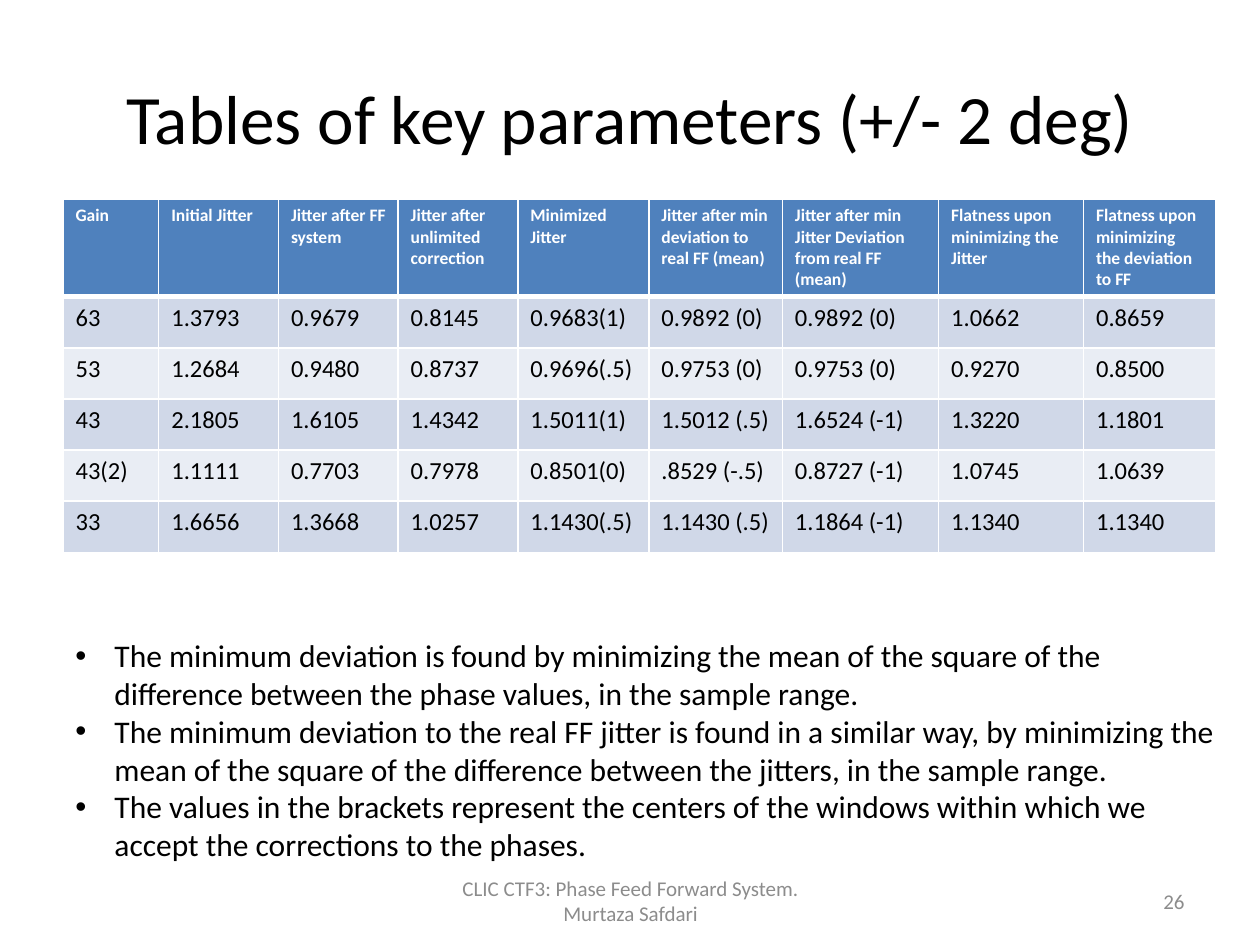
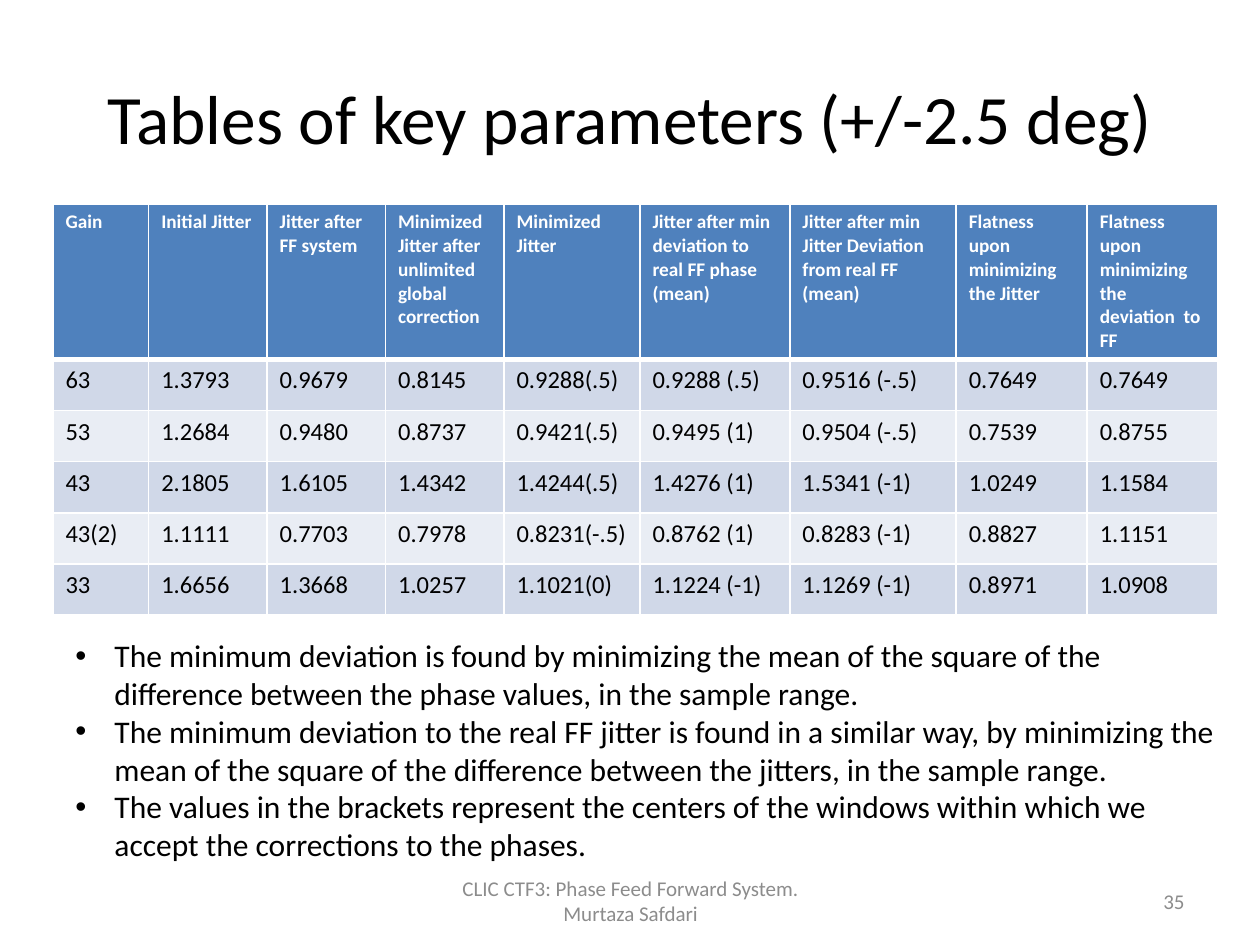
import pptx
import pptx.dml.color
import pptx.enum.text
import pptx.oxml
import pptx.oxml.ns
import pptx.util
from pptx.util import Inches

FONT = "Calibri"
BLACK, WHITE, GREY = "000000", "FFFFFF", "8C8C8C"
HEADER_FILL = "4F81BD"
BAND_FILLS = ("D0D8E8", "E9EDF4")
ROW_HEIGHT = Inches(2.03 / 5)
LEFT, CENTER, RIGHT = (
    pptx.enum.text.PP_ALIGN.LEFT,
    pptx.enum.text.PP_ALIGN.CENTER,
    pptx.enum.text.PP_ALIGN.RIGHT,
)
TOP, MIDDLE = pptx.enum.text.MSO_ANCHOR.TOP, pptx.enum.text.MSO_ANCHOR.MIDDLE

FOOTER = "CLIC CTF3: Phase Feed Forward System. Murtaza Safdari"
NOTES = [
    "The minimum deviation is found by minimizing the mean of the square of the "
    "difference between the phase values, in the sample range.",
    "The minimum deviation to the real FF jitter is found in a similar way, by minimizing "
    "the mean of the square of the difference between the jitters, in the sample range.",
    "The values in the brackets represent the centers of the windows within which we "
    "accept the corrections to the phases.",
]

MEASURED_JITTERS = [
    ["63", "1.3793", "0.9679", "0.8145"],
    ["53", "1.2684", "0.9480", "0.8737"],
    ["43", "2.1805", "1.6105", "1.4342"],
    ["43(2)", "1.1111", "0.7703", "0.7978"],
    ["33", "1.6656", "1.3668", "1.0257"],
]

PARAMETER_SLIDES = [
    {
        "title": "Tables of key parameters (+/- 2 deg)",
        "number": "26",
        "position": (0.5, 1.58),
        "widths": [0.76, 0.95, 0.95, 0.95, 1.04, 1.06, 1.24, 1.15, 1.05],
        "header_height": 0.77,
        "header_size": 10,
        "correction_header": "Jitter after unlimited correction",
        "deviation_header": "Jitter after min deviation to real FF (mean)",
        "minimized_values": [
            ["0.9683(1)", "0.9892 (0)", "0.9892 (0)", "1.0662", "0.8659"],
            ["0.9696(.5)", "0.9753 (0)", "0.9753 (0)", "0.9270", "0.8500"],
            ["1.5011(1)", "1.5012 (.5)", "1.6524 (-1)", "1.3220", "1.1801"],
            ["0.8501(0)", ".8529 (-.5)", "0.8727 (-1)", "1.0745", "1.0639"],
            ["1.1430(.5)", "1.1430 (.5)", "1.1864 (-1)", "1.1340", "1.1340"],
        ],
    },
    {
        "title": "Tables of key parameters (+/-2.5 deg)",
        "number": "35",
        "position": (0.42, 1.62),
        "widths": [0.76, 0.94, 0.94, 0.94, 1.08, 1.19, 1.32, 1.04, 1.04],
        "header_height": 1.22,
        "header_size": 11,
        "correction_header": "Minimized  Jitter after unlimited global  correction",
        "deviation_header": "Jitter after min deviation to real FF phase (mean)",
        "minimized_values": [
            ["0.9288(.5)", "0.9288 (.5)", "0.9516 (-.5)", "0.7649", "0.7649"],
            ["0.9421(.5)", "0.9495 (1)", "0.9504 (-.5)", "0.7539", "0.8755"],
            ["1.4244(.5)", "1.4276 (1)", "1.5341 (-1)", "1.0249", "1.1584"],
            ["0.8231(-.5)", "0.8762 (1)", "0.8283 (-1)", "0.8827", "1.1151"],
            ["1.1021(0)", "1.1224 (-1)", "1.1269 (-1)", "0.8971", "1.0908"],
        ],
    },
]


def color(hex_string):
    return pptx.dml.color.RGBColor.from_string(hex_string)


def write_text(paragraph, text, size=12, fill=BLACK, bold=False, align=LEFT):
    paragraph.alignment = align
    run = paragraph.add_run()
    run.text = text
    run.font.name = FONT
    run.font.size = pptx.util.Pt(size)
    run.font.bold = bold
    run.font.color.rgb = color(fill)


def add_bullet(paragraph):
    properties = paragraph._p.get_or_add_pPr()
    properties.set("marL", str(Inches(0.31)))
    properties.set("indent", str(-Inches(0.31)))
    namespace = pptx.oxml.ns.nsdecls("a")
    properties.append(pptx.oxml.parse_xml(f'<a:buFont {namespace} typeface="Arial"/>'))
    properties.append(pptx.oxml.parse_xml(f'<a:buChar {namespace} char="•"/>'))


def add_title(slide, text):
    title = slide.shapes.title
    title.left, title.top = Inches(0.5), Inches(0.3)
    title.width, title.height = Inches(9), Inches(1.25)
    title.text_frame.vertical_anchor = MIDDLE
    write_text(title.text_frame.paragraphs[0], text, size=39.6, align=CENTER)


def add_text_box(slide, position, texts, anchor=TOP, bulleted=False, **text_format):
    frame = slide.shapes.add_textbox(*map(Inches, position)).text_frame
    frame.word_wrap = True
    frame.vertical_anchor = anchor
    for index, text in enumerate(texts):
        paragraph = frame.add_paragraph() if index else frame.paragraphs[0]
        write_text(paragraph, text, **text_format)
        if bulleted:
            add_bullet(paragraph)


def set_cell_borders(cell, top, bottom):
    properties = cell._tc.get_or_add_tcPr()
    for side, points in (("L", 1), ("R", 1), ("T", top), ("B", bottom)):
        properties.append(pptx.oxml.parse_xml(
            f'<a:ln{side} {pptx.oxml.ns.nsdecls("a")} w="{pptx.util.Pt(points)}">'
            f'<a:solidFill><a:srgbClr val="{WHITE}"/></a:solidFill></a:ln{side}>'
        ))


def format_cell(cell, text, row_index, header_size):
    if row_index == 0:
        set_cell_borders(cell, top=1, bottom=3)
        background = HEADER_FILL
        text_format = {"size": header_size, "fill": WHITE, "bold": True}
    else:
        set_cell_borders(cell, top=3 if row_index == 1 else 1, bottom=1)
        background = BAND_FILLS[(row_index - 1) % 2]
        text_format = {"size": 14}
    cell.fill.solid()
    cell.fill.fore_color.rgb = color(background)
    write_text(cell.text_frame.paragraphs[0], text, **text_format)


def add_parameter_table(slide, content):
    headers = [
        "Gain", "Initial Jitter", "Jitter after FF system",
        content["correction_header"], "Minimized Jitter", content["deviation_header"],
        "Jitter after min Jitter Deviation from real FF (mean)",
        "Flatness upon minimizing the Jitter",
        "Flatness upon minimizing the deviation  to FF",
    ]
    rows = [headers] + [
        measured + minimized
        for measured, minimized in zip(MEASURED_JITTERS, content["minimized_values"])
    ]
    left, top = map(Inches, content["position"])
    header_height = Inches(content["header_height"])
    table = slide.shapes.add_table(
        len(rows), len(headers), left, top, Inches(sum(content["widths"])),
        header_height + ROW_HEIGHT * len(MEASURED_JITTERS),
    ).table
    for column, width in zip(table.columns, content["widths"]):
        column.width = Inches(width)
    for row_index, texts in enumerate(rows):
        table.rows[row_index].height = ROW_HEIGHT if row_index else header_height
        for column_index, text in enumerate(texts):
            cell = table.cell(row_index, column_index)
            format_cell(cell, text, row_index, content["header_size"])


def add_footer(slide, number):
    for position, text, align in (
        ((3.42, 6.95, 3.17, 0.4), FOOTER, CENTER),
        ((7.17, 6.95, 2.33, 0.4), number, RIGHT),
    ):
        add_text_box(slide, position, [text], anchor=MIDDLE, fill=GREY, align=align)


def main():
    presentation = pptx.Presentation()
    presentation.slide_width, presentation.slide_height = Inches(10), Inches(7.5)
    title_only = presentation.slide_layouts[5]
    for content in PARAMETER_SLIDES:
        slide = presentation.slides.add_slide(title_only)
        add_title(slide, content["title"])
        add_parameter_table(slide, content)
        add_footer(slide, content["number"])
        add_text_box(slide, (0.5, 5, 9.42, 1.92), NOTES, bulleted=True, size=18)
    presentation.save("out.pptx")


if __name__ == "__main__":
    main()
